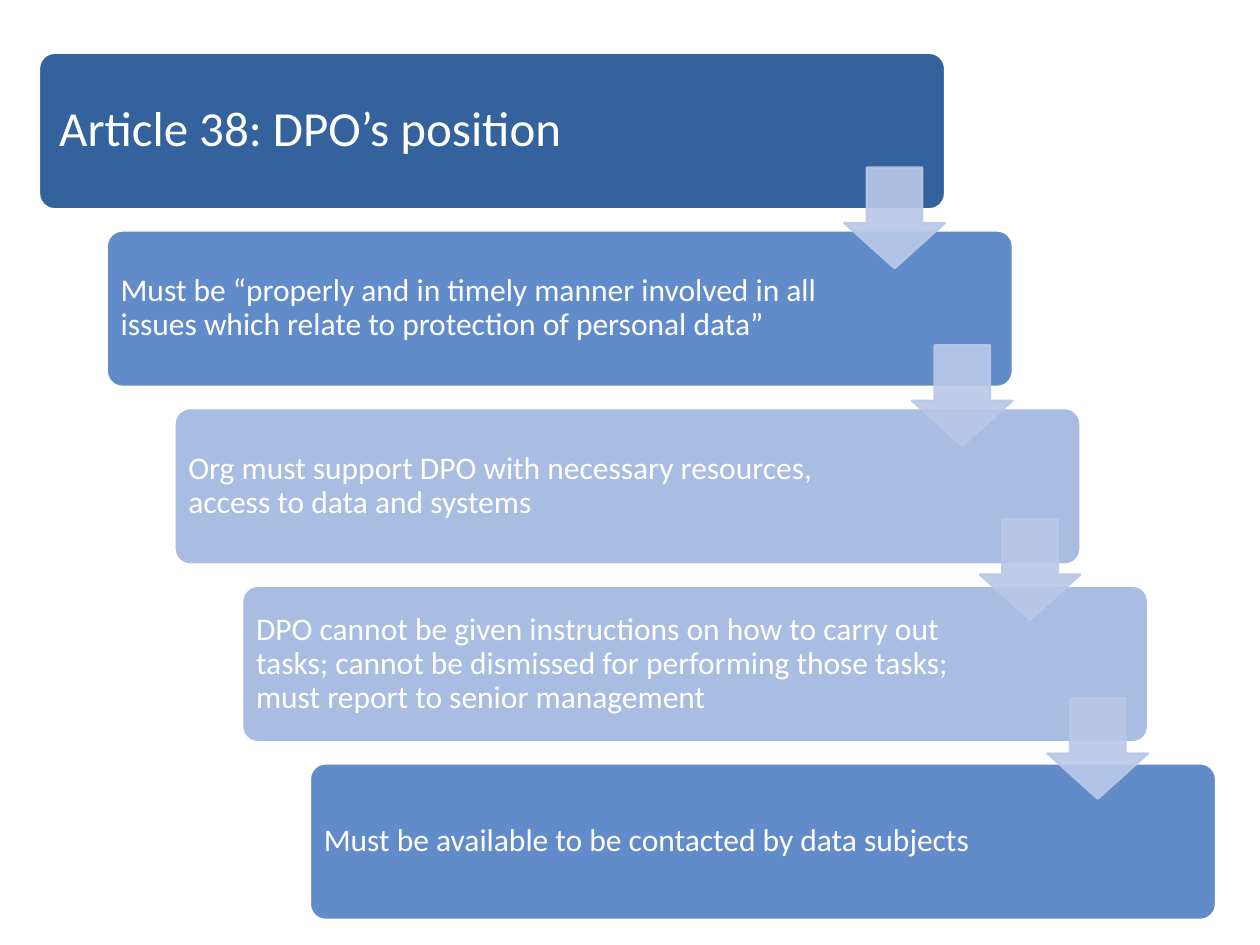
from dataclasses import dataclass

from lxml.etree import SubElement
from pptx import Presentation
from pptx.dml.color import RGBColor
from pptx.enum.shapes import MSO_SHAPE
from pptx.enum.text import MSO_ANCHOR, MSO_AUTO_SIZE, PP_ALIGN
from pptx.oxml.ns import qn
from pptx.util import Inches, Pt

WHITE = "FFFFFF"
ARROW_BLUE = "B9C8E8"
BAR_LEFT, BAR_TOP, BAR_WIDTH, BAR_HEIGHT = 0.31, 0.42, 7.19, 1.24
STEP_RIGHT, STEP_DOWN = 0.5375, 1.41
LABEL_OFFSET, LABEL_HEIGHT = 0.04, 1.16
ARROW_LEFT, ARROW_SIZE = 6.7, 0.8
ARROW_TOPS = (1.33, 2.74, 4.12, 5.54)


@dataclass(frozen=True)
class Step:
    wording: str
    fill: str
    size: int = 18
    inset: float = 0.07
    label_width: float = 5.77


STEPS = (
    Step("Article 38: DPO’s position", "33629C", 28, 0.12, 5.71),
    Step("Must be “properly and in timely manner involved in all issues "
         "which relate to protection of personal data”", "628BCA"),
    Step("Org must support DPO with necessary resources, "
         "access to data and systems", "A9BCE1"),
    Step("DPO cannot be given instructions on how to carry out tasks; "
         "cannot be dismissed for performing those tasks; "
         "must report to senior management", "A9BCE1"),
    Step("Must be available to be contacted by data subjects", "628BCA"),
)


def set_attributes(target, values: dict) -> None:
    for name, value in values.items():
        setattr(target, name, value)


def set_color(color_format, color: str) -> None:
    color_format.rgb = RGBColor.from_string(color)


def add_block(slide, preset, box: tuple, adjustments: tuple,
              fill: str, outline: str):
    block = slide.shapes.add_shape(preset, *map(Inches, box))
    for position, value in enumerate(adjustments):
        block.adjustments[position] = value
    block.shadow.inherit = False
    block.fill.solid()
    set_color(block.fill.fore_color, fill)
    block.line.fill.solid()
    set_color(block.line.color, outline)
    block.line.width = Pt(1.25)
    return block


def add_bar(slide, step: Step, index: int):
    box = (BAR_LEFT + index * STEP_RIGHT, BAR_TOP + index * STEP_DOWN,
           BAR_WIDTH, BAR_HEIGHT)
    return add_block(slide, MSO_SHAPE.ROUNDED_RECTANGLE, box, (0.1,),
                     step.fill, WHITE)


def write_label(label, step: Step, index: int) -> None:
    set_attributes(label, {
        "left": Inches(BAR_LEFT + index * STEP_RIGHT + LABEL_OFFSET),
        "top": Inches(BAR_TOP + index * STEP_DOWN + LABEL_OFFSET),
        "width": Inches(step.label_width),
        "height": Inches(LABEL_HEIGHT),
    })
    frame = label.text_frame
    frame.text = step.wording
    inset = Inches(step.inset)
    set_attributes(frame, {
        "word_wrap": True,
        "auto_size": MSO_AUTO_SIZE.NONE,
        "vertical_anchor": MSO_ANCHOR.MIDDLE,
        "margin_left": inset,
        "margin_right": inset,
        "margin_top": inset,
        "margin_bottom": inset,
    })
    paragraph = frame.paragraphs[0]
    set_attributes(paragraph, {"alignment": PP_ALIGN.LEFT,
                               "line_spacing": 0.9})
    font = paragraph.runs[0].font
    set_attributes(font, {"name": "Calibri", "size": Pt(step.size)})
    set_color(font.color, WHITE)


def add_arrow(slide, index: int, top: float) -> None:
    box = (ARROW_LEFT + index * STEP_RIGHT, top, ARROW_SIZE, ARROW_SIZE)
    arrow = add_block(slide, MSO_SHAPE.DOWN_ARROW, box, (0.55, 0.45),
                      ARROW_BLUE, ARROW_BLUE)
    for color in arrow._element.spPr.iter(qn("a:srgbClr")):
        SubElement(color, qn("a:alpha"), val="90000")


def main() -> None:
    deck = Presentation()
    set_attributes(deck, {"slide_width": Inches(10),
                          "slide_height": Inches(7.5)})
    slide = deck.slides.add_slide(deck.slide_layouts[5])
    title = slide.shapes.title
    for index, step in enumerate(STEPS):
        bar = add_bar(slide, step, index)
        if index == 0:
            title._element.addprevious(bar._element)
            label = title
        else:
            label = slide.shapes.add_textbox(0, 0, 0, 0)
        write_label(label, step, index)
    for index, top in enumerate(ARROW_TOPS):
        add_arrow(slide, index, top)
    deck.save("out.pptx")


if __name__ == "__main__":
    main()
